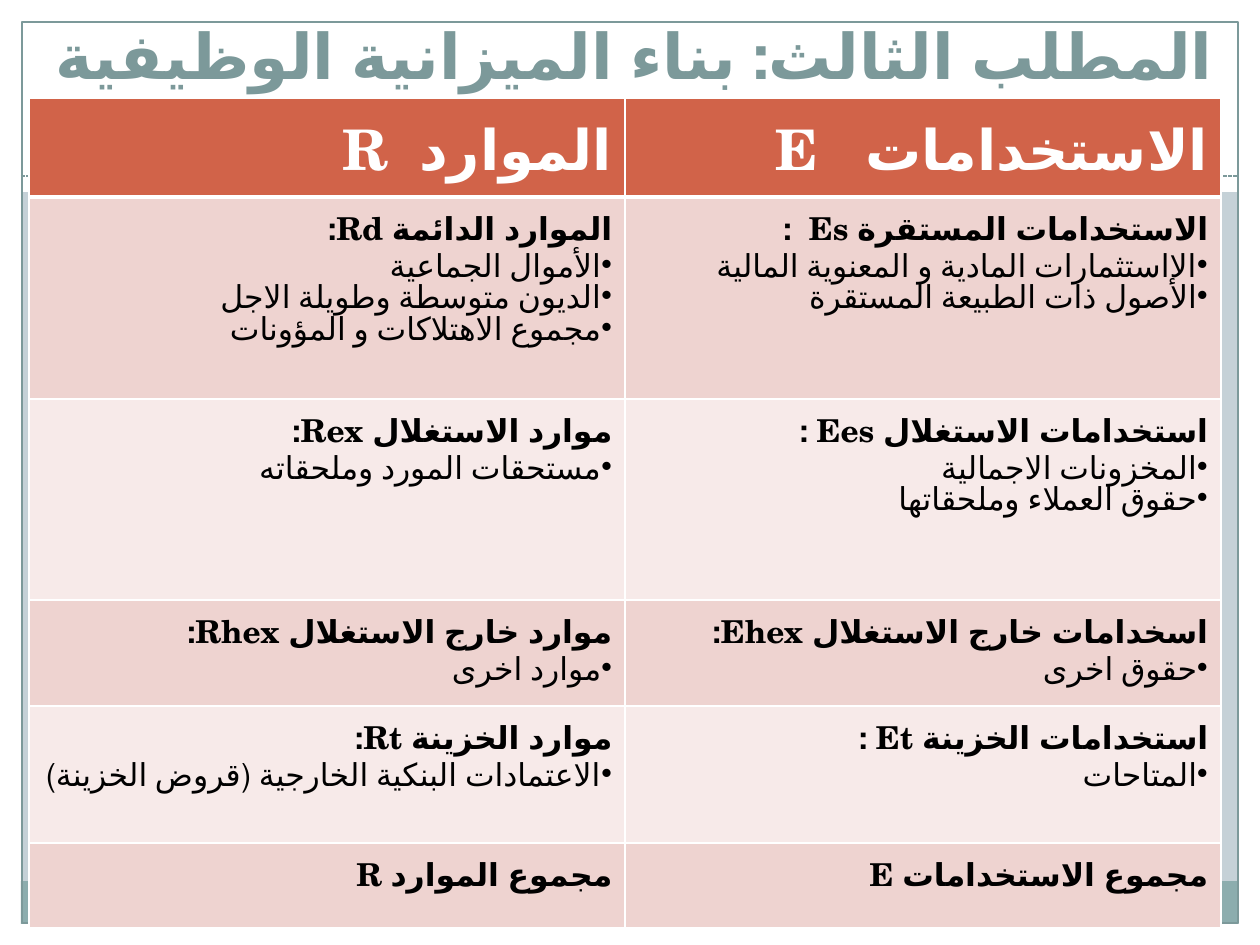
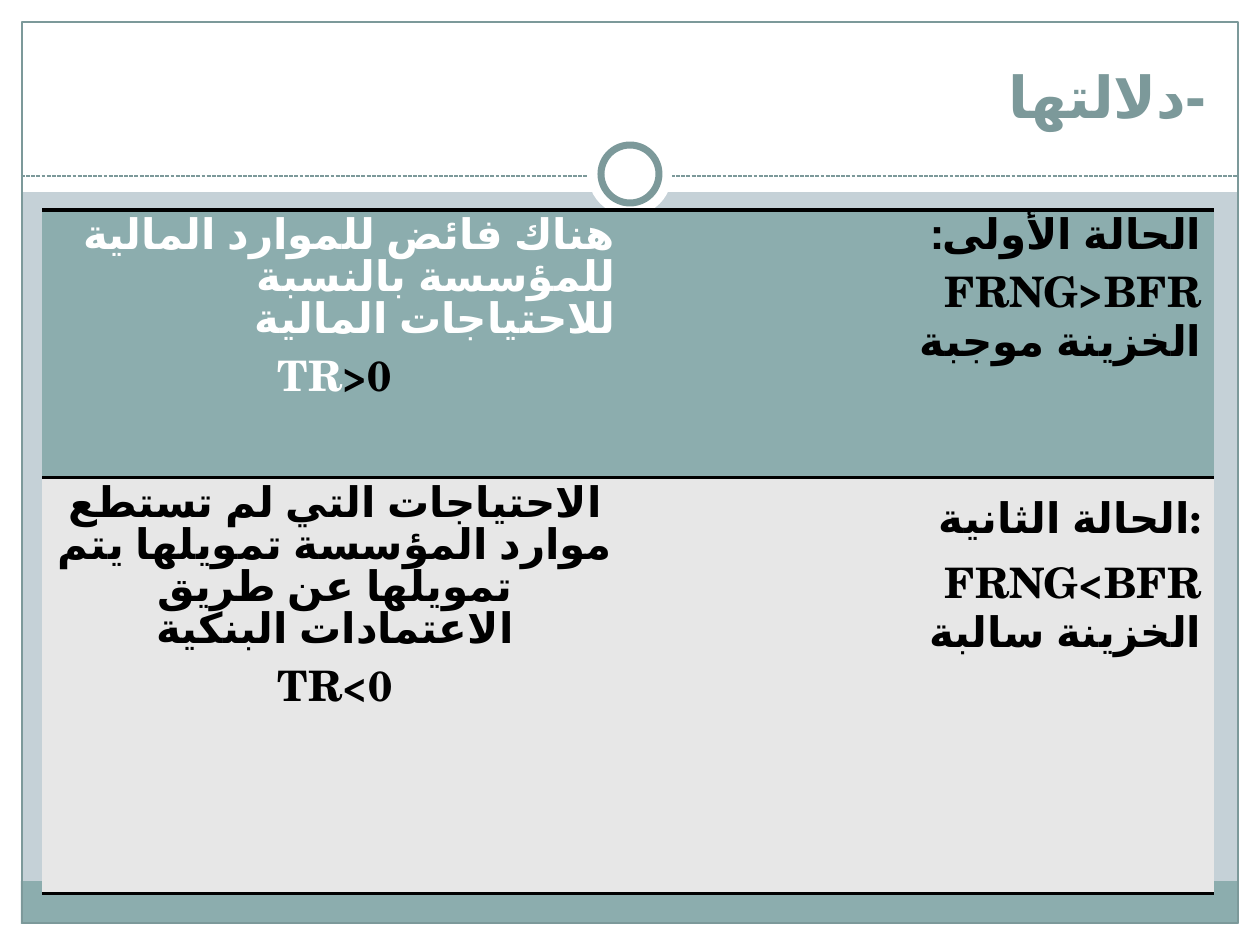
from pptx import Presentation
from pptx.dml.color import RGBColor
from pptx.enum.dml import MSO_LINE
from pptx.enum.shapes import MSO_CONNECTOR, MSO_SHAPE as SHAPE
from pptx.enum.text import MSO_ANCHOR, PP_ALIGN as ALIGN
from pptx.oxml.ns import qn
from pptx.util import Pt
from lxml.etree import SubElement

SCALE = 914400 / 126
FONT = "TeX Gyre Schola"
LANGUAGE = "ar-DZ"
WHITE = RGBColor(0xFF, 0xFF, 0xFF)
BLACK = RGBColor(0x00, 0x00, 0x00)
SKY = RGBColor(0xC5, 0xD1, 0xD7)
TEAL = RGBColor(0x8C, 0xAD, 0xAE)
DARK_TEAL = RGBColor(0x7C, 0x99, 0x9A)
RUST = RGBColor(0xD1, 0x63, 0x49)
ROSE = RGBColor(0xEE, 0xD3, 0xD0)
PALE_ROSE = RGBColor(0xF7, 0xEA, 0xE9)
GREY = RGBColor(0xE7, 0xE7, 0xE7)


def px(*values):
    return [round(v * SCALE) for v in values]


def write(tf, paragraphs, size=18, color=BLACK, align=ALIGN.RIGHT, rtl=True):
    for i, runs in enumerate(paragraphs):
        p = tf.add_paragraph() if i else tf.paragraphs[0]
        p.alignment = align[i] if isinstance(align, list) else align
        pPr = p._p.get_or_add_pPr()
        pPr.set("rtl", str(int(rtl)))
        runs = [(runs, color)] if isinstance(runs, str) else runs
        bullet = runs[0][0].startswith("•")
        if bullet:
            pPr.set("marL", "0")
            pPr.set("indent", "0")
            SubElement(pPr, qn("a:buChar")).set("char", "•")
        for text, run_color in runs:
            r = p.add_run()
            r.text = text.lstrip("•")
            r.font.name = FONT
            r.font.size = Pt(size)
            r.font.bold = not bullet
            r.font.color.rgb = run_color
            r._r.get_or_add_rPr().set("lang", LANGUAGE)


prs = Presentation()
prs.slide_width, prs.slide_height = px(1260, 945)

BANDS = [
    (SHAPE.RECTANGLE, (0, 924, 1260, 21), WHITE, None),
    (SHAPE.RECTANGLE, (0, 0, 1260, 192), WHITE, None),
    (SHAPE.RECTANGLE, (0, 0, 21, 945), WHITE, None),
    (SHAPE.RECTANGLE, (1239, 0, 21, 945), WHITE, None),
    (SHAPE.RECTANGLE, (21, 881, 1217, 43), TEAL, None),
    (SHAPE.RECTANGLE, (22, 22, 1216, 901), None, 0.75),
    (SHAPE.OVAL, (588, 132, 84, 84), WHITE, None),
    (SHAPE.OVAL, (601, 145, 58, 58), WHITE, 4),
]

BALANCE_ROWS = [
    (["الموارد  R"], ["الاستخدامات   E  "]),
    (["الموارد الدائمة Rd:", "•الأموال الجماعية ", "•الديون متوسطة وطويلة الاجل",
      "•مجموع الاهتلاكات و المؤونات"],
     ["الاستخدامات المستقرة Es  :", "•الااستثمارات المادية و المعنوية المالية",
      "•الأصول ذات الطبيعة المستقرة"]),
    (["موارد الاستغلال Rex:", "•مستحقات المورد وملحقاته"],
     ["استخدامات الاستغلال Ees :", "•المخزونات الاجمالية", "•حقوق العملاء وملحقاتها"]),
    (["موارد خارج الاستغلال Rhex:", "•موارد اخرى"],
     ["اسخدامات خارج الاستغلال Ehex:", "•حقوق اخرى"]),
    (["موارد الخزينة Rt:", "•الاعتمادات البنكية الخارجية (قروض الخزينة)"],
     ["استخدامات الخزينة Et :", "•المتاحات"]),
    (["مجموع الموارد R"], ["مجموع الاستخدامات E "]),
]

CASE_ROWS = [
    (["هناك فائض للموارد المالية للمؤسسة بالنسبة للاحتياجات المالية",
      [("TR", WHITE), (">0", BLACK)]],
     ["الحالة الأولى:", "FRNG>BFR", "الخزينة موجبة"]),
    (["الاحتياجات التي لم تستطع موارد المؤسسة تمويلها يتم تمويلها عن طريق الاعتمادات البنكية",
      "TR<0"],
     ["الحالة الثانية:", "FRNG<BFR", "الخزينة سالبة"]),
]

SLIDES = [
    dict(title="المطلب الثالث: بناء الميزانية الوظيفية ", title_box=(29, 0, 1197, 98),
         title_size=36, title_rtl=False, table_at=(29, 98), col_width=596,
         heights=[99, 202, 201, 106, 137, 85], rows=BALANCE_ROWS,
         fills=[RUST] + [ROSE, PALE_ROSE] * 2 + [ROSE],
         sides=(WHITE, 1), rules=[(WHITE, 1), (WHITE, 3)] + [(WHITE, 1)] * 5,
         formats={(0, 0): dict(size=32, color=WHITE), (0, 1): dict(size=32, color=WHITE)}),
    dict(title="-دلالتها", title_box=(42, 31, 1176, 105),
         title_size=33, title_rtl=True, table_at=(42, 210), col_width=586,
         heights=[268, 416], rows=CASE_ROWS, fills=[TEAL, GREY],
         sides=None, rules=[(BLACK, 2)] * 3,
         formats={(0, 0): dict(size=24, color=WHITE, align=[ALIGN.RIGHT, ALIGN.CENTER]),
                  (0, 1): dict(size=24),
                  (1, 0): dict(size=24, align=ALIGN.CENTER),
                  (1, 1): dict(size=24, rtl=False)}),
]

for page in SLIDES:
    s = prs.slides.add_slide(prs.slide_layouts[6])
    s.background.fill.solid()
    s.background.fill.fore_color.rgb = SKY

    for kind, box, fill, line_width in BANDS:
        if kind == SHAPE.OVAL and line_width is None:
            line = s.shapes.add_connector(MSO_CONNECTOR.STRAIGHT, *px(21, 176, 1239, 176))
            line.line.color.rgb = DARK_TEAL
            line.line.width = Pt(0.75)
            line.line.dash_style = MSO_LINE.SQUARE_DOT
            SubElement(line._element.spPr, qn("a:effectLst"))
        sp = s.shapes.add_shape(kind, *px(*box))
        sp.shadow.inherit = False
        if fill is None:
            sp.fill.background()
        else:
            sp.fill.solid()
            sp.fill.fore_color.rgb = fill
        if line_width is None:
            sp.line.fill.background()
        else:
            sp.line.color.rgb = DARK_TEAL
            sp.line.width = Pt(line_width)

    tf = s.shapes.add_textbox(*px(*page["title_box"])).text_frame
    tf.word_wrap = True
    tf.vertical_anchor = MSO_ANCHOR.BOTTOM
    write(tf, [page["title"]], size=page["title_size"], color=DARK_TEAL, rtl=page["title_rtl"])

    heights, width = page["heights"], page["col_width"]
    frame = s.shapes.add_table(len(heights), 2, *px(*page["table_at"], 2 * width, sum(heights)))
    table = frame.table
    for col in table.columns:
        col.width = px(width)[0]
    for i, pair in enumerate(page["rows"]):
        table.rows[i].height = px(heights[i])[0]
        for j, paragraphs in enumerate(pair):
            cell = table.cell(i, j)
            tcPr = cell._tc.get_or_add_tcPr()
            borders = [page["sides"], page["sides"], page["rules"][i], page["rules"][i + 1]]
            for side, border in zip("LRTB", borders):
                ln = SubElement(tcPr, qn(f"a:ln{side}"))
                if border is None:
                    SubElement(ln, qn("a:noFill"))
                else:
                    ln.set("w", str(Pt(border[1])))
                    solid = SubElement(ln, qn("a:solidFill"))
                    SubElement(solid, qn("a:srgbClr")).set("val", str(border[0]))
            cell.fill.solid()
            cell.fill.fore_color.rgb = page["fills"][i]
            write(cell.text_frame, paragraphs, **page["formats"].get((i, j), {}))

prs.save("out.pptx")
